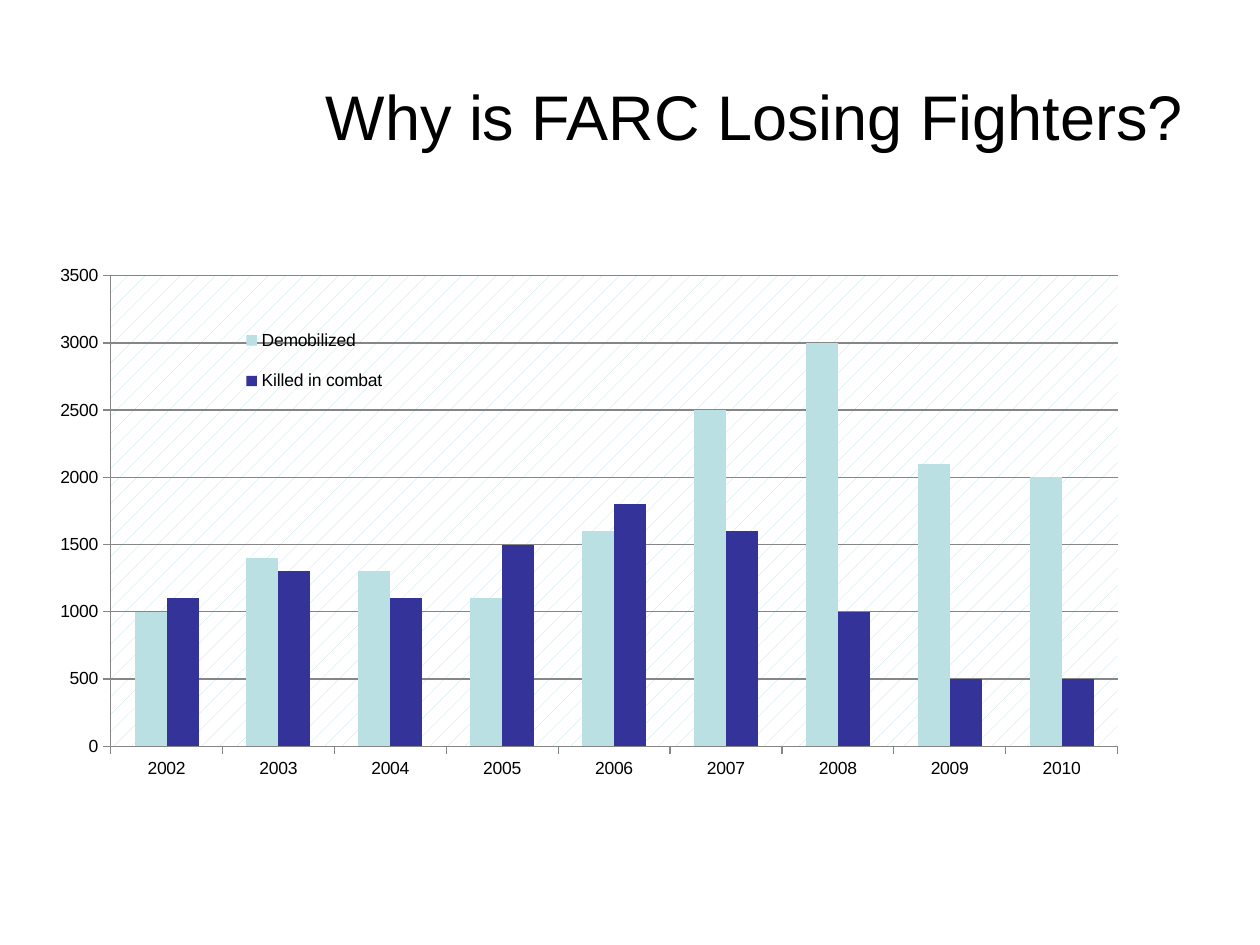
"""Build the slide comparing demobilized FARC fighters with those killed in combat."""
import lxml.etree
import pptx
import pptx.chart.data
import pptx.dml.color
import pptx.enum.chart
import pptx.enum.text
import pptx.oxml
import pptx.oxml.ns
import pptx.util

YEARS = [str(year) for year in range(2002, 2011)]
FIGHTERS = {
    "Demobilized": ("BBE0E3", [1000, 1400, 1300, 1100, 1600, 2500, 3000, 2100, 2000]),
    "Killed in combat": ("333399", [1100, 1300, 1100, 1500, 1800, 1600, 1000, 500, 500]),
}


def color(value):
    return pptx.dml.color.RGBColor.from_string(value)


def format_font(font, name, size, font_color):
    font.name = name
    font.size = pptx.util.Pt(size)
    font.color.rgb = color(font_color)


def write_text(text_frame, text, *, font, size, font_color, align, anchor):
    text_frame.word_wrap = True
    text_frame.vertical_anchor = anchor
    paragraph = text_frame.paragraphs[0]
    paragraph.alignment = align
    run = paragraph.add_run()
    run.text = text
    format_font(run.font, font, size, font_color)


def make_layout(x, y, width, height, inner=False):
    namespaces = pptx.oxml.ns.nsdecls("c")
    target = '<c:layoutTarget val="inner"/>' if inner else ""
    modes = '<c:xMode val="edge"/><c:yMode val="edge"/>'
    sizes = "".join(
        f'<c:{tag} val="{value}"/>'
        for tag, value in zip("xywh", (x, y, width, height))
    )
    return pptx.oxml.parse_xml(
        f"<c:layout {namespaces}><c:manualLayout>{target}{modes}{sizes}"
        "</c:manualLayout></c:layout>"
    )


def place(element, position, layout):
    for old_layout in element.findall(pptx.oxml.ns.qn("c:layout")):
        element.remove(old_layout)
    element.insert(position, layout)


class SlideBuilder:
    font = "Arial"
    text_color = "000000"
    line_color = "868686"

    def __init__(self, presentation):
        self.slide = presentation.slides.add_slide(presentation.slide_layouts[5])

    def add_title(self, text, left, top, width, height):
        title = self.slide.shapes.title
        title.left, title.top = pptx.util.Cm(left), pptx.util.Cm(top)
        title.width, title.height = pptx.util.Cm(width), pptx.util.Cm(height)
        write_text(
            title.text_frame, text, font=self.font, size=36,
            font_color=self.text_color, align=pptx.enum.text.PP_ALIGN.RIGHT,
            anchor=pptx.enum.text.MSO_ANCHOR.MIDDLE,
        )

    def add_column_chart(self, categories, groups, left, top, width, height):
        data = pptx.chart.data.CategoryChartData()
        data.categories = categories
        for name, (_, values) in groups.items():
            data.add_series(name, values)
        chart = self.slide.shapes.add_chart(
            pptx.enum.chart.XL_CHART_TYPE.COLUMN_CLUSTERED,
            pptx.util.Cm(left), pptx.util.Cm(top),
            pptx.util.Cm(width), pptx.util.Cm(height), data,
        ).chart
        chart.has_title = False
        format_font(chart.font, self.font, 10, self.text_color)
        plot = chart.plots[0]
        plot.gap_width = 150
        plot.overlap = 0
        plot.vary_by_categories = False
        for series, (fill_color, _) in zip(plot.series, groups.values()):
            series.format.fill.solid()
            series.format.fill.fore_color.rgb = color(fill_color)
        self.format_axes(chart)
        self.format_plot_area(chart)
        self.add_legend(chart)

    def format_axes(self, chart):
        value_axis = chart.value_axis
        value_axis.minimum_scale, value_axis.maximum_scale = 0, 3500
        value_axis.major_unit = 500
        value_axis.has_major_gridlines = True
        for axis in (chart.category_axis, value_axis):
            axis.major_tick_mark = pptx.enum.chart.XL_TICK_MARK.OUTSIDE
            self.format_line(axis.format.line)
        self.format_line(value_axis.major_gridlines.format.line)

    def format_line(self, line):
        line.color.rgb = color(self.line_color)
        line.width = pptx.util.Pt(0.75)

    def format_plot_area(self, chart):
        plot_area = chart.plots[0]._element.getparent()
        place(plot_area, 0, make_layout(0.05, 0.02, 0.89, 0.83, inner=True))
        plot_area.append(pptx.oxml.parse_xml(
            f'<c:spPr {pptx.oxml.ns.nsdecls("c", "a")}><a:pattFill prst="pct5">'
            '<a:fgClr><a:srgbClr val="BBE0E3"/></a:fgClr>'
            '<a:bgClr><a:srgbClr val="FFFFFF"/></a:bgClr></a:pattFill>'
            "<a:ln><a:noFill/></a:ln></c:spPr>"
        ))

    def add_legend(self, chart):
        chart.has_legend = True
        legend = chart.legend
        legend.position = pptx.enum.chart.XL_LEGEND_POSITION.RIGHT
        legend.include_in_layout = False
        format_font(legend.font, self.font, 10, self.text_color)
        place(legend._element, 1, make_layout(0.13, 0.08, 0.2, 0.18))


def main():
    presentation = pptx.Presentation()
    presentation.slide_width = pptx.util.Cm(25.4)
    presentation.slide_height = pptx.util.Cm(19.05)
    builder = SlideBuilder(presentation)
    builder.add_title("Why is FARC Losing Fighters?", 4.7, 0.74, 19.41, 3.18)
    builder.add_column_chart(YEARS, FIGHTERS, 1.09, 5.33, 22.81, 11.43)
    presentation.save("out.pptx")


if __name__ == "__main__":
    main()
